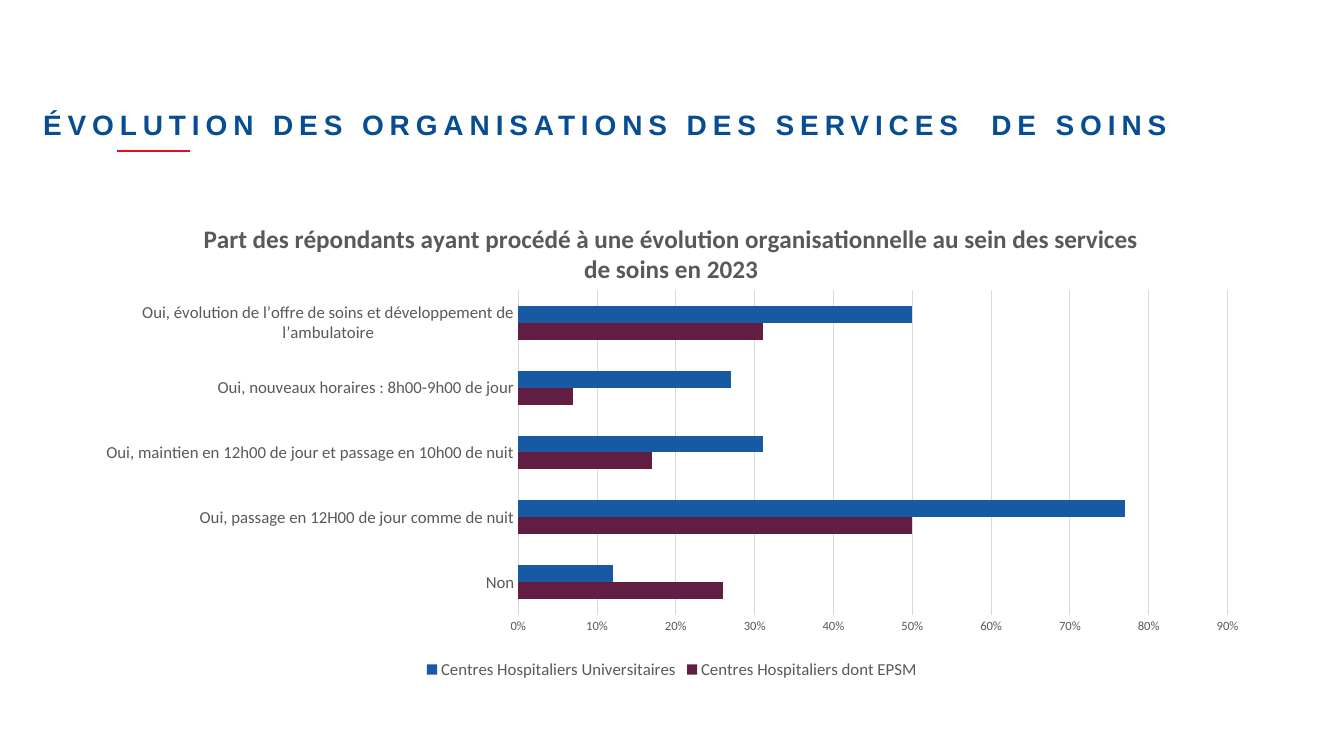
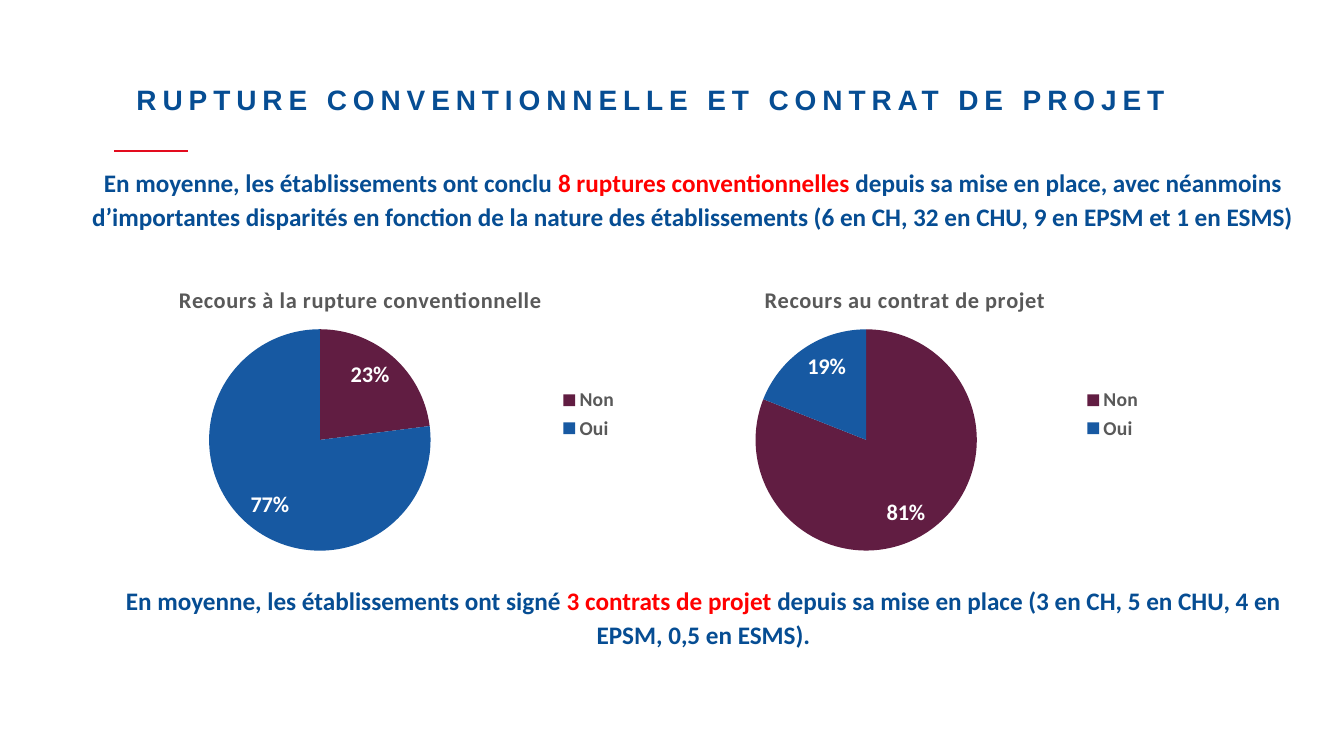
from dataclasses import dataclass
from typing import Any, NamedTuple

from lxml import etree
from pptx import Presentation
from pptx import slide as sl
from pptx import util as u
from pptx.chart import chart as ch
from pptx.chart import data as chart_data
from pptx.dml.color import RGBColor
from pptx.enum import chart as ce
from pptx.enum import shapes, text
from pptx.oxml.ns import qn

PX = 9525


@dataclass(frozen=True)
class Theme:
    navy: str = "064D93"
    rule_red: str = "E30C1E"
    accent_red: str = "FF0000"
    blue: str = "1759A2"
    plum: str = "611D42"
    grey: str = "595959"
    grid: str = "D9D9D9"
    white: str = "FFFFFF"
    heading_font: str = "Arial"
    body_font: str = "Calibri"
    heading_size: int = 20
    body_size: int = 18
    pie_title_size: int = 16
    pie_legend_size: int = 14
    bar_label_size: int = 12
    tick_size: int = 9
    chart_size: int = 10
    heading_spacing: int = 420
    pie_title_spacing: int = 50


THEME = Theme()


class Box(NamedTuple):
    left: int
    top: int
    width: int
    height: int

    def emu(self) -> list[int]:
        return [value * PX for value in self]


class Layout(NamedTuple):
    x: float
    y: float
    w: float | None = None
    h: float | None = None


@dataclass(frozen=True)
class Heading:
    words: str
    box: Box
    rule_left: int


@dataclass(frozen=True)
class Message:
    box: Box
    before: str
    highlight: str
    after: str


@dataclass(frozen=True)
class Pie:
    title: str
    box: Box
    shares: tuple[int, int]
    title_layout: Layout
    plot_layout: Layout


BAR_HEADING = Heading(
    "ÉVOLUTION DES ORGANISATIONS DES SERVICES  DE SOINS", Box(41, 108, 1143, 27), 111
)
PIE_HEADING = Heading(
    "RUPTURE CONVENTIONNELLE ET CONTRAT DE PROJET", Box(130, 84, 990, 25), 109
)

BAR_BOX = Box(77, 183, 1126, 468)
BAR_TITLE = (
    "Part des répondants ayant procédé à une évolution organisationnelle "
    "au sein des services de soins en 2023"
)
BAR_CATEGORIES = (
    "Non",
    "Oui, passage en 12H00 de jour comme de nuit",
    "Oui, maintien en 12h00 de jour et passage en 10h00 de nuit",
    "Oui, nouveaux horaires : 8h00-9h00 de jour",
    "Oui, évolution de l’offre de soins et développement de l’ambulatoire",
)
BAR_SERIES = {
    "Centres Hospitaliers dont EPSM": (0.26, 0.5, 0.17, 0.07, 0.31),
    "Centres Hospitaliers Universitaires": (0.12, 0.77, 0.31, 0.27, 0.5),
}
PALETTE = (THEME.plum, THEME.blue)

MESSAGES = (
    Message(
        Box(78, 150, 1164, 75),
        "En moyenne, les établissements ont conclu ",
        "8 ruptures conventionnelles ",
        "depuis sa mise en place, avec néanmoins d’importantes disparités en fonction "
        "de la nature des établissements (6 en CH, 32 en CHU, 9 en EPSM et 1 en ESMS)",
    ),
    Message(
        Box(109, 548, 1122, 75),
        "En moyenne, les établissements ont signé ",
        "3 contrats de projet ",
        "depuis sa mise en place (3 en CH, 5 en CHU, 4 en EPSM, 0,5 en ESMS).",
    ),
)
PIES = (
    Pie("Recours à la rupture conventionnelle", Box(78, 250, 521, 289), (23, 77),
        Layout(0.17, 0.06), Layout(0.23, 0.22, 0.41, 0.73)),
    Pie("Recours au contrat de projet", Box(619, 250, 479, 289), (81, 19),
        Layout(0.22, 0.06), Layout(0.21, 0.22, 0.44, 0.73)),
)


def assign(target: Any, **values: Any) -> None:
    for name, value in values.items():
        setattr(target, name, value)


def style_font(font: Any, size: int, color: str, bold: bool = False,
               name: str = THEME.body_font) -> None:
    assign(font, size=u.Pt(size), bold=bold, name=name)
    font.color.rgb = RGBColor.from_string(color)


def paint(fill: Any, color: str) -> None:
    fill.solid()
    fill.fore_color.rgb = RGBColor.from_string(color)


def style_line(line: Any, color: str, width: float) -> None:
    line.color.rgb = RGBColor.from_string(color)
    line.width = u.Pt(width)


def add_paragraph(slide: sl.Slide, box: Box, **values: Any) -> tuple[Any, Any]:
    frame = slide.shapes.add_textbox(*box.emu()).text_frame
    frame.word_wrap = True
    paragraph = frame.paragraphs[0]
    assign(paragraph, **values)
    return frame, paragraph


def add_run(paragraph: Any, words: str, spacing: int = 0, **font: Any) -> None:
    run = paragraph.add_run()
    run.text = words
    style_font(run.font, **font)
    if spacing:
        run._r.get_or_add_rPr().set("spc", str(spacing))


def add_heading(slide: sl.Slide, heading: Heading) -> None:
    top = 144 * PX
    rule = slide.shapes.add_connector(
        shapes.MSO_CONNECTOR.STRAIGHT,
        heading.rule_left * PX, top, (heading.rule_left + 70) * PX, top,
    )
    style_line(rule.line, THEME.rule_red, 1.5)
    etree.SubElement(rule._element.spPr, qn("a:effectLst"))
    frame, paragraph = add_paragraph(
        slide, heading.box, alignment=text.PP_ALIGN.JUSTIFY, line_spacing=u.Pt(19.6)
    )
    assign(frame, margin_left=0, margin_top=0, margin_right=0, margin_bottom=0)
    add_run(paragraph, heading.words, THEME.heading_spacing, size=THEME.heading_size,
            color=THEME.navy, bold=True, name=THEME.heading_font)


def add_message(slide: sl.Slide, message: Message) -> None:
    _, paragraph = add_paragraph(
        slide, message.box, alignment=text.PP_ALIGN.CENTER, line_spacing=1.15
    )
    for words, color in (
        (message.before, THEME.navy),
        (message.highlight, THEME.accent_red),
        (message.after, THEME.navy),
    ):
        add_run(paragraph, words, size=THEME.body_size, color=color, bold=True)


def place(parent: Any, index: int, layout: Layout) -> None:
    for existing in parent.findall(qn("c:layout")):
        parent.remove(existing)
    element = etree.Element(qn("c:layout"))
    manual = etree.SubElement(element, qn("c:manualLayout"))
    settings = {"xMode": "edge", "yMode": "edge", **layout._asdict()}
    if layout.w is not None:
        settings = {"layoutTarget": "inner", **settings}
    for name, value in settings.items():
        if value is not None:
            etree.SubElement(manual, qn(f"c:{name}")).set("val", str(value))
    parent.insert(index, element)


def add_chart(slide: sl.Slide, kind: Any, box: Box, data: Any, title: str, title_size: int,
              title_layout: Layout, plot_layout: Layout, spacing: int = 0) -> ch.Chart:
    chart = slide.shapes.add_chart(kind, *box.emu(), data).chart
    assign(chart, has_title=True, has_legend=True)
    style_font(chart.font, THEME.chart_size, THEME.grey)
    paragraph = chart.chart_title.text_frame.paragraphs[0]
    add_run(paragraph, title, spacing, size=title_size, color=THEME.grey, bold=True)
    place(chart.chart_title._element, 1, title_layout)
    place(chart._chartSpace.chart.plotArea, 0, plot_layout)
    return chart


def style_legend(chart: ch.Chart, position: Any, size: int, bold: bool = False) -> None:
    assign(chart.legend, position=position, include_in_layout=False)
    style_font(chart.legend.font, size, THEME.grey, bold)


def add_bar_chart(slide: sl.Slide) -> None:
    data = chart_data.CategoryChartData(number_format="0%")
    data.categories = BAR_CATEGORIES
    for name, values in BAR_SERIES.items():
        data.add_series(name, values)
    chart = add_chart(slide, ce.XL_CHART_TYPE.BAR_CLUSTERED, BAR_BOX, data, BAR_TITLE,
                      THEME.body_size, Layout(0.1, 0.05), Layout(0.37, 0.2, 0.6, 0.66))
    style_legend(chart, ce.XL_LEGEND_POSITION.BOTTOM, THEME.bar_label_size)
    plot = chart.plots[0]
    assign(plot, gap_width=182, overlap=0, vary_by_categories=False)
    for series, color in zip(plot.series, PALETTE):
        paint(series.format.fill, color)
    for axis, size in ((chart.category_axis, THEME.bar_label_size),
                       (chart.value_axis, THEME.tick_size)):
        assign(axis, major_tick_mark=ce.XL_TICK_MARK.NONE, minor_tick_mark=ce.XL_TICK_MARK.NONE)
        style_font(axis.tick_labels.font, size, THEME.grey)
    style_line(chart.category_axis.format.line, THEME.grid, 0.75)
    values_axis = chart.value_axis
    assign(values_axis, minimum_scale=0, maximum_scale=0.9, major_unit=0.1)
    assign(values_axis.tick_labels, number_format="0%", number_format_is_linked=False)
    values_axis.format.line.fill.background()
    style_line(values_axis.major_gridlines.format.line, THEME.grid, 0.75)


def add_pie(slide: sl.Slide, pie: Pie) -> None:
    data = chart_data.CategoryChartData()
    data.categories = ("Non", "Oui")
    data.add_series("Series 1", pie.shares)
    chart = add_chart(slide, ce.XL_CHART_TYPE.PIE, pie.box, data, pie.title,
                      THEME.pie_title_size, pie.title_layout, pie.plot_layout,
                      THEME.pie_title_spacing)
    style_legend(chart, ce.XL_LEGEND_POSITION.RIGHT, THEME.pie_legend_size, True)
    plot = chart.plots[0]
    assign(plot, vary_by_categories=True, has_data_labels=True)
    for index, color in enumerate(PALETTE):
        paint(plot.series[0].points[index].format.fill, color)
    labels = plot.data_labels
    assign(labels, show_percentage=True, show_value=False, number_format="0%",
           number_format_is_linked=False, position=ce.XL_LABEL_POSITION.INSIDE_END)
    style_font(labels.font, THEME.pie_title_size, THEME.white, True)


def main() -> None:
    presentation = Presentation()
    assign(presentation, slide_width=1280 * PX, slide_height=720 * PX)
    blank = presentation.slide_layouts[6]

    bar_slide = presentation.slides.add_slide(blank)
    add_heading(bar_slide, BAR_HEADING)
    add_bar_chart(bar_slide)

    pie_slide = presentation.slides.add_slide(blank)
    add_heading(pie_slide, PIE_HEADING)
    for message in MESSAGES:
        add_message(pie_slide, message)
    for pie in PIES:
        add_pie(pie_slide, pie)

    presentation.save("out.pptx")


if __name__ == "__main__":
    main()
